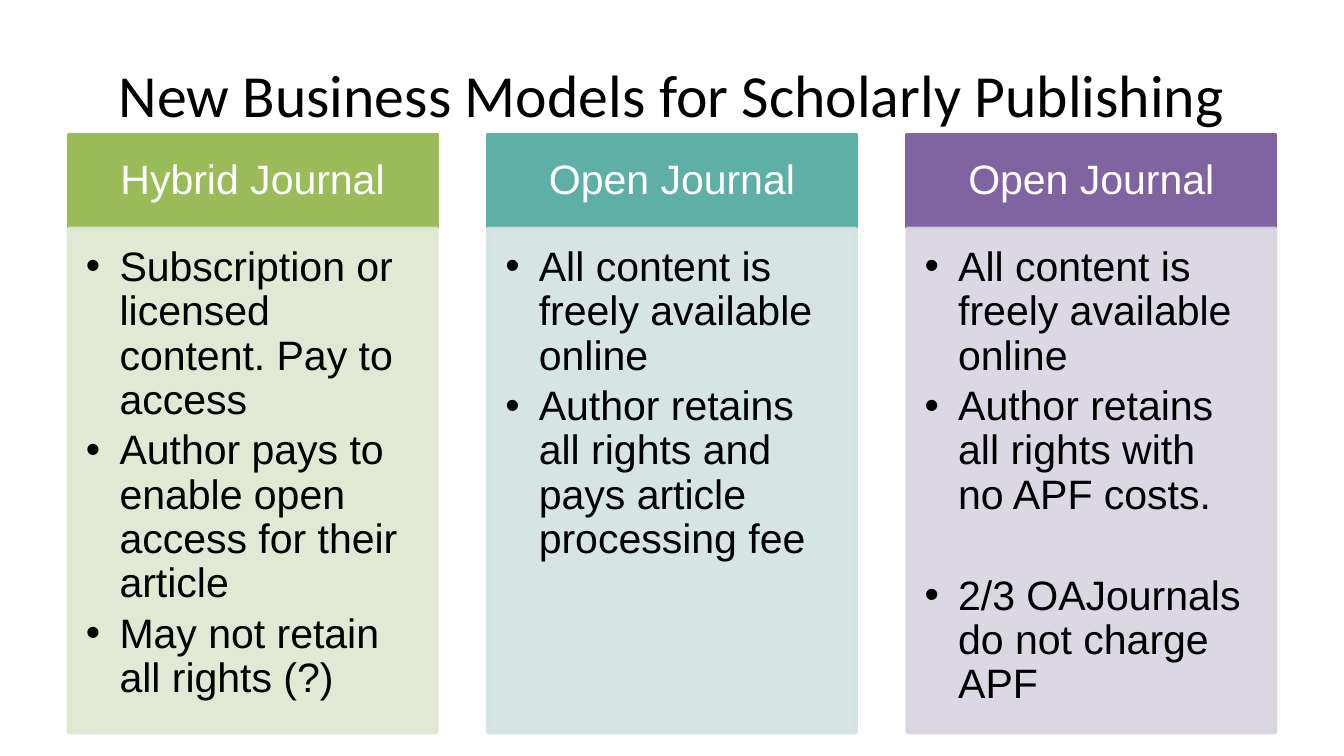
"""Build a slide comparing three scholarly publishing models in columns."""
import lxml.etree
import pptx
import pptx.dml.color
import pptx.enum.shapes
import pptx.enum.text
import pptx.oxml.ns
import pptx.util

Inches, Pt = pptx.util.Inches, pptx.util.Pt
ANCHOR, ALIGN = pptx.enum.text.MSO_ANCHOR, pptx.enum.text.PP_ALIGN
qn = pptx.oxml.ns.qn

LEFT, TOP, PITCH, WIDTH = 0.51, 1, 3.12, 2.74
HEADER_HEIGHT, BODY_TOP, BODY_HEIGHT = 0.69, 1.7, 3.75
COLUMNS = [
    ("Hybrid Journal", "9BBB59", "DEE7D1", [
        ("Subscription or licensed content. Pay to access", 0),
        ("Author pays to enable open access for their article", 0),
        ("May not retain all rights (?)", 0),
    ]),
    ("Open Journal", "5EAFA6", "D2E3E2", [
        ("All content is freely available online", 0),
        ("Author retains all rights and pays article processing fee", 0),
    ]),
    ("Open Journal", "8064A2", "D8D3E0", [
        ("All content is freely available online", 0),
        ("Author retains all rights with no APF costs.", 0),
        ("2/3 OAJournals do not charge APF", 27),
    ]),
]


def paint(color_format, value):
    color_format.rgb = pptx.dml.color.RGBColor.from_string(value)


def write(box, lines, frame_format, para_format, font_format, color):
    frame = box.text_frame
    for name, value in frame_format.items():
        setattr(frame, name, value)
    for index, (text, gap) in enumerate(lines):
        para = frame.add_paragraph() if index else frame.paragraphs[0]
        for name, value in (para_format | {"space_before": Pt(gap)}).items():
            setattr(para, name, value)
        span = para.add_run()
        span.text = text
        for name, value in font_format.items():
            setattr(span.font, name, value)
        paint(span.font.color, color)


deck = pptx.Presentation()
deck.slide_width = Inches(10)
deck.slide_height = deck.slide_width * 9 // 16
page = deck.slides.add_slide(deck.slide_layouts[6])

side, edge = Inches(0.17), Inches(0.1)
header_frame = {"word_wrap": True, "vertical_anchor": ANCHOR.MIDDLE,
                "margin_left": side, "margin_right": side,
                "margin_top": edge, "margin_bottom": edge}
title_frame = header_frame | {"margin_left": edge, "margin_right": edge}
body_frame = {"word_wrap": True, "vertical_anchor": ANCHOR.TOP,
              "margin_left": Inches(0.13), "margin_right": Inches(0.2),
              "margin_top": Inches(0.13), "margin_bottom": Inches(0.19)}
header_para = {"alignment": ALIGN.CENTER, "line_spacing": 0.9}
body_para = {"alignment": ALIGN.LEFT, "line_spacing": 0.9, "space_after": Pt(3.3)}
label_font = {"name": "Arial", "size": Pt(22)}

title = page.shapes.add_textbox(Inches(0.5), Inches(0.23), Inches(9), Inches(0.94))
write(title, [("New Business Models for Scholarly Publishing", 0)], title_frame,
      {"alignment": ALIGN.CENTER}, {"name": "Calibri", "size": Pt(32)}, "000000")

for column, (heading, strong, pale, points) in enumerate(COLUMNS):
    left = LEFT + column * PITCH
    boxes = []
    for top, height, color in ((TOP, HEADER_HEIGHT, strong), (BODY_TOP, BODY_HEIGHT, pale)):
        box = page.shapes.add_shape(pptx.enum.shapes.MSO_SHAPE.RECTANGLE, Inches(left),
                                    Inches(top), Inches(WIDTH), Inches(height))
        box.shadow.inherit = False
        box.fill.solid()
        paint(box.fill.fore_color, color)
        paint(box.line.color, color)
        box.line.width = Pt(2)
        boxes.append(box)
    header, body = boxes
    write(header, [(heading, 0)], header_frame, header_para, label_font, "FFFFFF")
    write(body, points, body_frame, body_para, label_font, "000000")
    for color in body._element.spPr.iter(qn("a:srgbClr")):
        lxml.etree.SubElement(color, qn("a:alpha"), val="90000")
    for para in body.text_frame.paragraphs:
        properties = para._p.get_or_add_pPr()
        properties.set("marL", str(Inches(0.25)))
        properties.set("indent", str(-Inches(0.25)))
        lxml.etree.SubElement(properties, qn("a:buFont"), typeface="Arial")
        lxml.etree.SubElement(properties, qn("a:buChar"), char="•")

deck.save("out.pptx")
